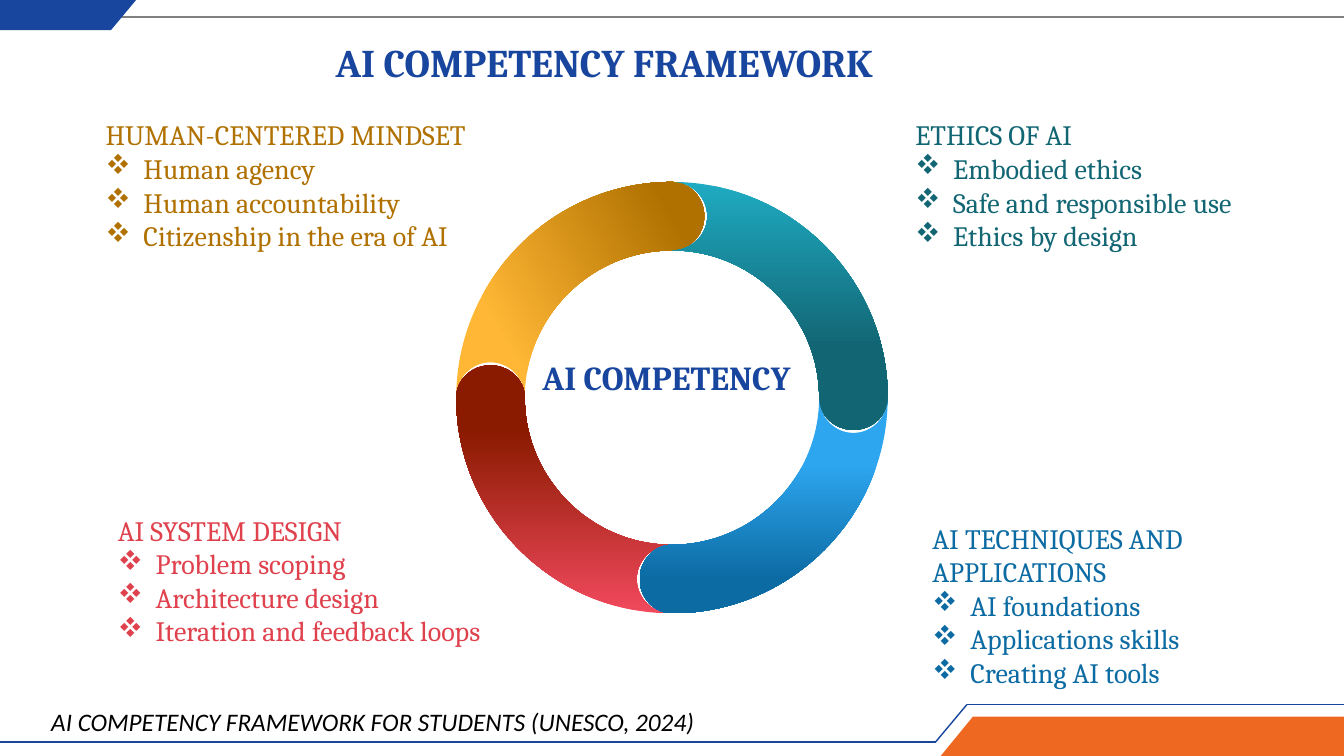
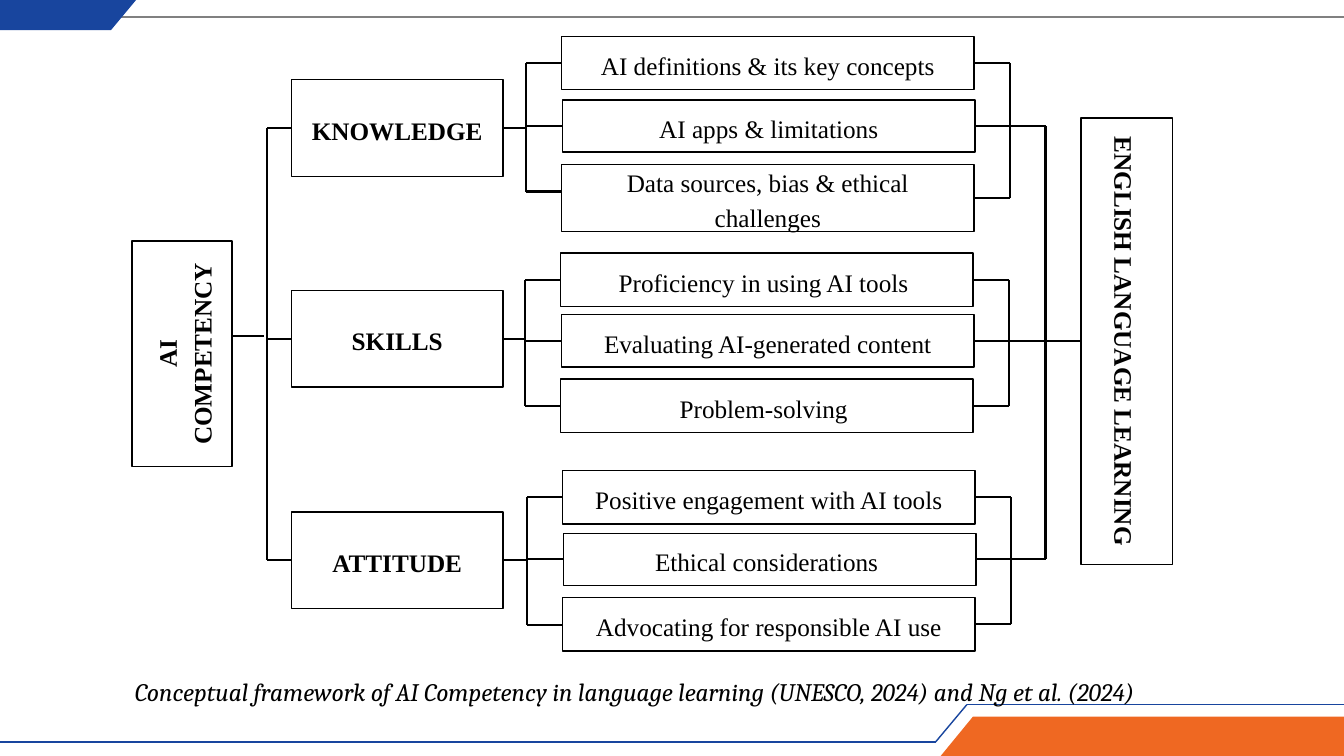
from lxml import etree
from pptx import Presentation
from pptx import util as u
from pptx.dml.color import RGBColor
from pptx.enum import shapes, text
from pptx.oxml.ns import qn

# Shared look
BLUE, ORANGE, GREY, BLACK, WHITE = "18459E", "EF6822", "808080", "000000", "FFFFFF"
HEADING, BODY, DIAGRAM = "Cambria", "Calibri", "Times New Roman"
WIDTH, HEIGHT = 13.33, 7.5
FRAME_LINES = [  # points of each line, colour
    ([(0, 7.36), (9.28, 7.36), (9.59, 6.99), (WIDTH, 6.99)], BLUE),
    ([(0.96, 0.17), (WIDTH, 0.17)], GREY),
]
FRAME_CORNERS = [
    ([(9.65, 7.11), (WIDTH, 7.11), (WIDTH, HEIGHT), (9.33, HEIGHT)], ORANGE),
    ([(0, 0), (1.35, 0), (1.1, 0.3), (0, 0.3)], BLUE),
]
LEFT, RIGHT = 1, 3  # connection sites

# Slide 1 content
TITLE = "AI COMPETENCY FRAMEWORK"
RING_LABEL = "AI COMPETENCY"
RING_SOURCE = "AI COMPETENCY FRAMEWORK FOR STUDENTS (UNESCO, 2024)"
COMPETENCIES = [  # box, colour, heading, items
    ((8.98, 1.12, 3.93, 1.45), "126674", "ETHICS OF AI",
     ["Embodied ethics", "Safe and responsible use", "Ethics by design"]),
    ((9.15, 5.12, 3.93, 1.78), "0C6BA3", "AI TECHNIQUES AND APPLICATIONS",
     ["AI foundations", "Applications skills", "Creating AI tools"]),
    ((1.07, 5.04, 3.93, 1.78), "DF414D", "AI SYSTEM DESIGN",
     ["Problem scoping", "Architecture design", "Iteration and feedback loops"]),
    ((0.95, 1.12, 3.93, 1.78), "B07100", "HUMAN-CENTERED MINDSET",
     ["Human agency", "Human accountability", "Citizenship in the era of AI"]),
]
RING_CENTRE, RING_RADIUS, CAP_RADIUS = (6.665, 3.945), 1.8, 0.34
HEAD_REACH, TAIL_REACH = 0.32, 0.35  # the difference shows as a white gap
CURVE = 0.55  # handle length of a quarter circle
UP, EAST, DOWN, WEST = (0, -1), (1, 0), (0, 1), (-1, 0)
RING_QUARTERS = [  # tail side, head side, gradient angle, (position, colour) stops
    (WEST, UP, 30, [(0.21, "FFB735"), (0.87, "B07100")]),
    (DOWN, WEST, 90, [(0, "F1495D"), (0.74, "8A1A00")]),
    (UP, EAST, 270, [(0, "1FABC2"), (0.66, "126674")]),
    (EAST, DOWN, 270, [(0.31, "2DA5EF"), (0.84, "0C6BA3")]),
]

# Slide 2 content
ROOT, GOAL = "AI COMPETENCY", "ENGLISH LANGUAGE LEARNING"
BRANCHES = [  # category, top, left of leaves, leaves with their tops and heights
    ("KNOWLEDGE", 0.79, 5.57, [
        ("AI definitions & its key concepts", 0.36, 0.53),
        ("AI apps & limitations", 0.99, 0.52),
        ("Data sources, bias & ethical challenges", 1.63, 0.67)]),
    ("SKILLS", 2.88, 5.56, [
        ("Proficiency in using AI tools ", 2.51, 0.53),
        ("Evaluating AI-generated content", 3.12, 0.52),
        ("Problem-solving ", 3.76, 0.53)]),
    ("ATTITUDE", 5.08, 5.58, [
        ("Positive engagement with AI tools", 4.67, 0.53),
        ("Ethical considerations ", 5.29, 0.52),
        ("Advocating for responsible AI use", 5.93, 0.53)]),
]
LEAF_WIDTH, STUB = 4.09, 0.35
TREE_SOURCE = ("Conceptual framework of AI Competency in language learning "
               "(UNESCO, 2024) and Ng et al. (2024)")


def colour(value):
    return RGBColor.from_string(value)


def apply(target, formats):
    for name, value in formats.items():
        setattr(target, name, value)


def write(frame, lines, size, font, ink, paragraph_formats=None, **font_formats):
    frame.word_wrap = True
    for index, line in enumerate(lines):
        paragraph = frame.paragraphs[0] if index == 0 else frame.add_paragraph()
        apply(paragraph, paragraph_formats or {})
        run = paragraph.add_run()
        run.text = line
        apply(run.font, {"size": u.Pt(size), "name": font, **font_formats})
        run.font.color.rgb = colour(ink)


def add_text(slide, box, lines, *style, **formats):
    frame = slide.shapes.add_textbox(*map(u.Inches, box)).text_frame
    write(frame, lines, *style, **formats)
    return frame


def add_bullet(paragraph):
    properties = paragraph._p.get_or_add_pPr()
    indent = u.Pt(27)
    properties.set("marL", str(indent))
    properties.set("indent", str(-indent))
    font = etree.SubElement(properties, qn("a:buFont"))
    font.set("typeface", "Wingdings")
    font.set("charset", "2")
    # In Wingdings the letter v draws ❖
    etree.SubElement(properties, qn("a:buChar")).set("char", "v")


def add_line(slide, start, end, ink=BLACK, width=1.5):
    connector = slide.shapes.add_connector(
        shapes.MSO_CONNECTOR.STRAIGHT, *map(u.Inches, (*start, *end)))
    connector.line.color.rgb = colour(ink)
    connector.line.width = u.Pt(width)
    etree.SubElement(connector._element.spPr, qn("a:effectLst"))
    return connector


def add_outline(slide, points):
    points = [(u.Inches(x), u.Inches(y)) for x, y in points]
    builder = slide.shapes.build_freeform(*points[0])
    builder.add_line_segments(points[1:], close=True)
    shape = builder.convert_to_shape()
    shape.shadow.inherit = False
    shape.line.fill.background()
    return shape


def new_slide(presentation):
    slide = presentation.slides.add_slide(presentation.slide_layouts[6])
    for points, ink in FRAME_LINES:
        for start, end in zip(points, points[1:]):
            add_line(slide, start, end, ink, 1)
    for points, ink in FRAME_CORNERS:
        fill = add_outline(slide, points).fill
        fill.solid()
        fill.fore_color.rgb = colour(ink)
    return slide


# Ring of four quarters, each with a round head and a hollow tail
def move(point, direction, distance):
    return tuple(p + d * distance for p, d in zip(point, direction))


def arc(centre, start, end, start_reach, end_reach):
    """Two handles and the end point of a quarter turn."""
    first, last = move(centre, start, start_reach), move(centre, end, end_reach)
    return [move(first, end, end_reach * CURVE),
            move(last, start, start_reach * CURVE), last]


def bend(shape):
    """Turn every three line segments into one curve."""
    outline = next(shape._element.iter(qn("a:moveTo"))).getparent()
    segments = outline.findall(qn("a:lnTo"))
    for index in range(0, len(segments) - 2, 3):
        curve = etree.Element(qn("a:cubicBezTo"))
        segments[index].addprevious(curve)
        for segment in segments[index:index + 3]:
            curve.append(segment[0])
            outline.remove(segment)


def add_quarter(slide, tail, head, angle, stops):
    outer, inner = RING_RADIUS + CAP_RADIUS, RING_RADIUS - CAP_RADIUS
    back = move((0, 0), tail, -1)
    inward = move((0, 0), head, -1)
    head_centre = move(RING_CENTRE, head, RING_RADIUS)
    tail_centre = move(RING_CENTRE, tail, RING_RADIUS)
    shape = add_outline(slide, [
        move(RING_CENTRE, tail, outer),
        *arc(RING_CENTRE, tail, head, outer, outer),
        *arc(head_centre, head, back, CAP_RADIUS, HEAD_REACH),
        *arc(head_centre, back, inward, HEAD_REACH, CAP_RADIUS),
        *arc(RING_CENTRE, head, tail, inner, inner),
        *arc(tail_centre, back, head, CAP_RADIUS, TAIL_REACH),
        *arc(tail_centre, head, tail, TAIL_REACH, CAP_RADIUS)])
    bend(shape)
    shape.fill.gradient()
    shape.fill.gradient_angle = angle
    for stop, (position, ink) in zip(shape.fill.gradient_stops, stops):
        stop.position = position
        stop.color.rgb = colour(ink)


def build_ring_slide(presentation):
    slide = new_slide(presentation)
    for quarter in RING_QUARTERS:
        add_quarter(slide, *quarter)
    for box, ink, heading, items in COMPETENCIES:
        frame = add_text(slide, box, [heading, *items], 20, HEADING, ink)
        for paragraph in frame.paragraphs[1:]:
            add_bullet(paragraph)
    add_text(slide, (5.23, 3.49, 2.76, 0.91), [RING_LABEL], 24, HEADING, BLUE,
             {"alignment": text.PP_ALIGN.CENTER}, bold=True)
    add_text(slide, (0.41, 6.96, 6.86, 0.4), [RING_SOURCE], 18, BODY, BLACK, italic=True)
    title = add_text(slide, (3.23, 0.21, 6.84, 0.86), [TITLE], 28, HEADING, BLUE,
                     {"line_spacing": 0.9}, bold=True)
    title.vertical_anchor = text.MSO_ANCHOR.MIDDLE


# Tree of boxes
def add_box(slide, box, label, bold=False, direction=None):
    shape = slide.shapes.add_shape(shapes.MSO_SHAPE.RECTANGLE, *map(u.Inches, box))
    shape.shadow.inherit = False
    shape.fill.solid()
    shape.fill.fore_color.rgb = colour(WHITE)
    shape.line.color.rgb = colour(BLACK)
    shape.line.width = u.Pt(1)
    frame = shape.text_frame
    frame.vertical_anchor = text.MSO_ANCHOR.MIDDLE
    if direction:
        wide, narrow = u.Inches(0.1), u.Inches(0.05)
        apply(frame, {"margin_top": wide, "margin_bottom": wide,
                      "margin_left": narrow, "margin_right": narrow})
        frame._txBody.bodyPr.set("vert", direction)
    write(frame, [label], 18, DIAGRAM, BLACK,
          {"alignment": text.PP_ALIGN.CENTER, "line_spacing": 1.15,
           "space_after": u.Pt(8)}, bold=bold)
    return shape


def middle(box):
    return (box.top + box.height / 2) / u.Inches(1)


def add_stub(slide, x, box, site):
    y = middle(box)
    add_line(slide, (x, y), (x, y)).end_connect(box, site)


def add_bracket(slide, x, boxes, site):
    add_line(slide, (x, middle(boxes[0])), (x, middle(boxes[-1])))
    for box in boxes:
        add_stub(slide, x, box, site)


def build_tree_slide(presentation):
    slide = new_slide(presentation)
    trunk, gather = 2.65, 10.37
    add_box(slide, (1.31, 2.39, 0.99, 2.24), ROOT, True, "vert270")
    goal = add_box(slide, (10.72, 1.17, 0.91, 4.43), GOAL, True, "vert")
    categories, centres = [], []
    for name, top, left, entries in BRANCHES:
        category = add_box(slide, (2.89, top, 2.1, 0.96), name, True)
        leaves = [add_box(slide, (left + 0.01 * (index == 1), leaf_top, LEAF_WIDTH, height), label)
                  for index, (label, leaf_top, height) in enumerate(entries)]
        fork, join = left - STUB, left + LEAF_WIDTH + STUB + 0.01
        add_stub(slide, fork, category, RIGHT)
        # The fork meets the last leaf at the height of its first line
        last_y = entries[-1][1] + 0.27
        add_line(slide, (fork, middle(leaves[0])), (fork, last_y))
        add_line(slide, (fork, last_y), (left, last_y))
        for leaf in leaves[:-1]:
            add_stub(slide, fork, leaf, LEFT)
        add_bracket(slide, join, leaves, RIGHT)
        centre = middle(leaves[1])
        add_line(slide, (join, centre), (gather, centre))
        categories.append(category)
        centres.append(centre)
    add_bracket(slide, trunk, categories, LEFT)
    add_line(slide, (2.3, 3.33), (2.62, 3.33))
    add_line(slide, (gather, centres[0]), (gather, centres[-1]))
    add_stub(slide, gather, goal, LEFT)
    add_text(slide, (1.24, 6.66, 11.76, 0.4), [TREE_SOURCE], 18, HEADING, BLACK, italic=True)


def main():
    presentation = Presentation()
    presentation.slide_width = u.Inches(WIDTH)
    presentation.slide_height = u.Inches(HEIGHT)
    build_ring_slide(presentation)
    build_tree_slide(presentation)
    presentation.save("out.pptx")


if __name__ == "__main__":
    main()
